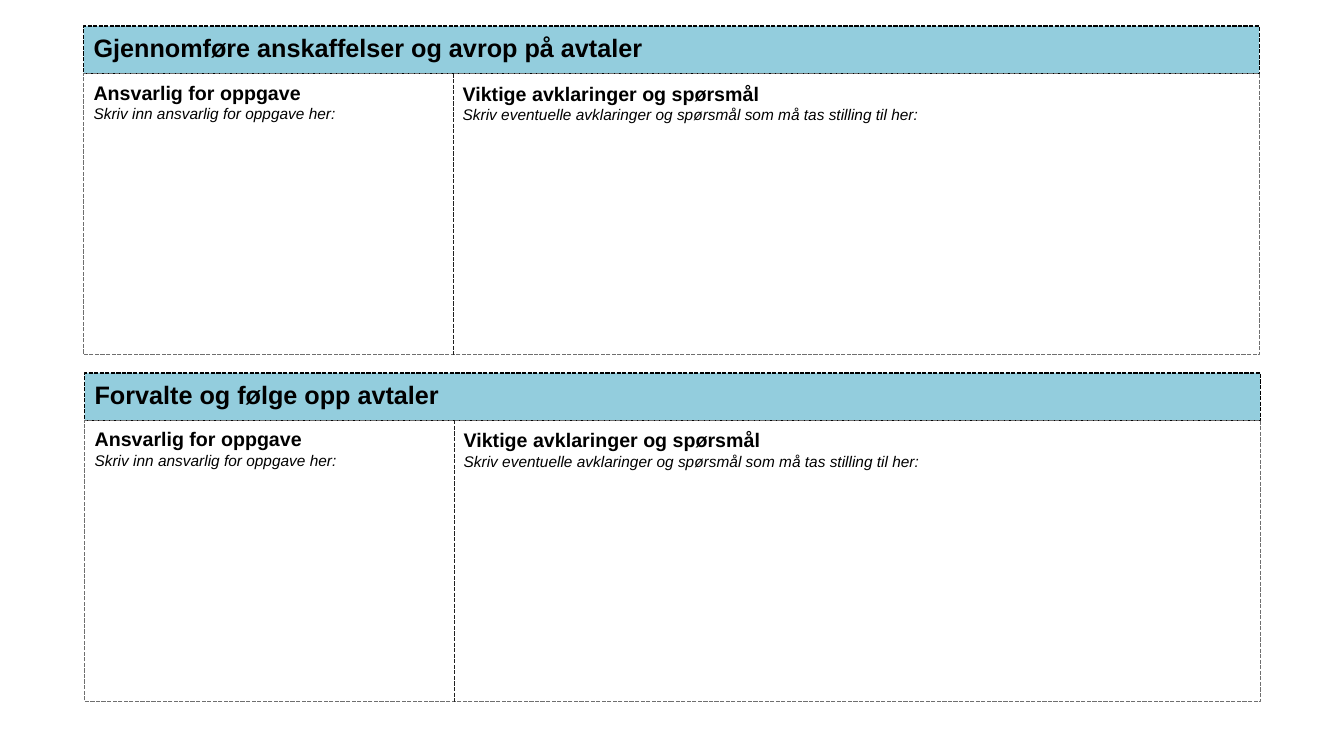
import dataclasses

import lxml.etree
import pptx
import pptx.dml.color
import pptx.enum.dml
import pptx.enum.shapes
import pptx.enum.text
import pptx.oxml.ns
import pptx.util

PX = 9144  # EMU per px, 100 px to the inch


@dataclasses.dataclass(frozen=True)
class Theme:
    font: str = "Arial"
    text: str = "000000"
    band_fill: str = "93CDDD"
    band_line: str = "000000"
    panel_line: str = "6F6F6F"
    divider_line: str = "202020"
    line_width: int = 1
    heading_size: int = 18
    label_size: int = 14
    prompt_size: int = 11


THEME = Theme()

BAND_HEIGHT = 47
BAND_INSET = 6
DIVIDER_OFFSET = 367

# Label, prompt, then left, top, width and height within the panel
FIELDS = [
    ("Ansvarlig for oppgave", "Skriv inn ansvarlig for oppgave her:",
     (0, 2, 366, 52)),
    ("Viktige avklaringer og spørsmål",
     "Skriv eventuelle avklaringer og spørsmål som må tas stilling til her:",
     (366, 3, 755, 54)),
]

# Heading, then left, top, width and height on the slide
SECTIONS = [
    ("Gjennomføre anskaffelser og avrop på avtaler", (83, 26, 1166, 326)),
    ("Forvalte og følge opp avtaler", (84, 370, 1166, 326)),
]


def px(*lengths):
    return [pptx.util.Emu(length * PX) for length in lengths]


def rgb(value):
    return pptx.dml.color.RGBColor.from_string(value)


def dash_line(line, color):
    line.color.rgb = rgb(color)
    line.width = pptx.util.Pt(THEME.line_width)
    line.dash_style = pptx.enum.dml.MSO_LINE.SQUARE_DOT


def write(paragraph, text, size, bold=False, italic=False):
    paragraph.text = text
    paragraph.alignment = pptx.enum.text.PP_ALIGN.LEFT
    font = paragraph.font
    font.name = THEME.font
    font.size = pptx.util.Pt(size)
    font.bold = bold
    font.italic = italic
    font.color.rgb = rgb(THEME.text)


def add_frame(slide, box, line_color, fill=None):
    frame = slide.shapes.add_shape(
        pptx.enum.shapes.MSO_SHAPE.RECTANGLE, *px(*box))
    frame.shadow.inherit = False
    if fill:
        frame.fill.solid()
        frame.fill.fore_color.rgb = rgb(fill)
    else:
        frame.fill.background()
    dash_line(frame.line, line_color)
    return frame


def add_band(slide, box, heading):
    band = add_frame(slide, box, THEME.band_line, THEME.band_fill)
    text = band.text_frame
    text.vertical_anchor = pptx.enum.text.MSO_ANCHOR.TOP
    text.margin_top, text.margin_bottom = px(BAND_INSET, 0)
    write(text.paragraphs[0], heading, THEME.heading_size, bold=True)


def add_divider(slide, x, top, bottom):
    divider = slide.shapes.add_connector(
        pptx.enum.shapes.MSO_CONNECTOR.STRAIGHT, *px(x, top, x, bottom))
    dash_line(divider.line, THEME.divider_line)
    lxml.etree.SubElement(
        divider._element.spPr, pptx.oxml.ns.qn("a:effectLst"))


def add_field(slide, box, label, prompt):
    field = slide.shapes.add_textbox(*px(*box)).text_frame
    field.word_wrap = True
    field.auto_size = pptx.enum.text.MSO_AUTO_SIZE.SHAPE_TO_FIT_TEXT
    write(field.paragraphs[0], label, THEME.label_size, bold=True)
    write(field.add_paragraph(), prompt, THEME.prompt_size, italic=True)


def add_section(slide, box, heading):
    left, top, width, height = box
    panel_top = top + BAND_HEIGHT

    # Heading band
    add_band(slide, (left, top, width, BAND_HEIGHT), heading)

    # Panel split into two columns
    add_frame(slide, (left, panel_top, width, height - BAND_HEIGHT),
              THEME.panel_line)
    add_divider(slide, left + DIVIDER_OFFSET, panel_top, top + height)

    # Fields to fill in
    for label, prompt, (dx, dy, field_width, field_height) in FIELDS:
        add_field(slide, (left + dx, panel_top + dy, field_width, field_height),
                  label, prompt)


def main():
    deck = pptx.Presentation()
    deck.slide_width, deck.slide_height = px(1333, 750)
    slide = deck.slides.add_slide(deck.slide_layouts.get_by_name("Blank"))
    for heading, box in SECTIONS:
        add_section(slide, box, heading)
    deck.save("out.pptx")


if __name__ == "__main__":
    main()
